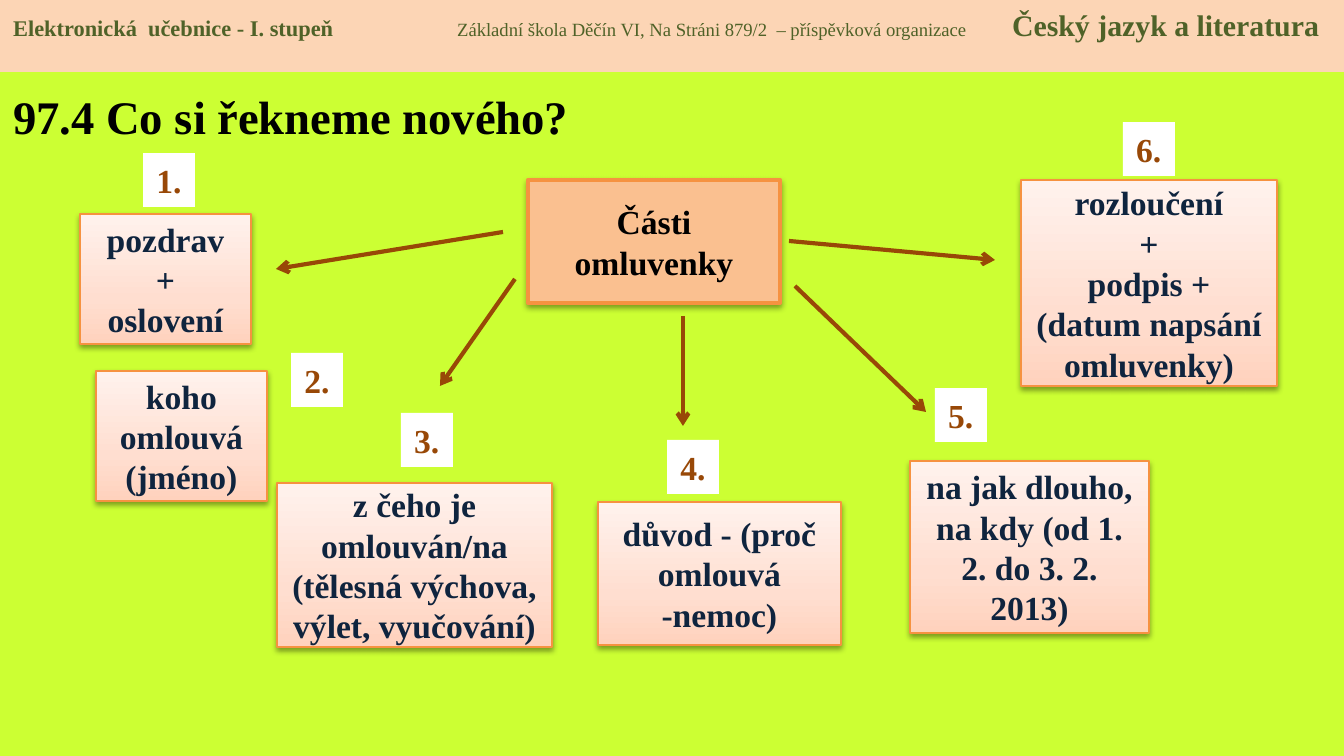
"""Builds a slide that maps the parts of a letter of excuse."""
import pptx
import pptx.dml.color
import pptx.enum.shapes
import pptx.enum.text
import pptx.oxml
import pptx.oxml.ns
import pptx.util

PX = 9144000 / 1344
THEME = {
    "font": "Times New Roman",
    "page": "CCFF33", "band": "FCD5B5", "header": "4F6228", "title": "000000",
    "hub": "FAC090", "edge": "F69240", "card_text": "0F243E",
    "accent": "984807", "badge": "FFFFFF", "shadow": "000000",
    "gradient": [(0, "FFD2BD"), (35, "FFDED0"), (100, "FFF2ED")],
    "title_size": 25, "body_size": 18, "thick": 2.25, "thin": 0.75,
}

TITLE = ("97.4 Co si řekneme nového?", (0, 72, 630, 88))
BAND = (0, 0, 1344, 72)
HEADER = [
    ("Elektronická  učebnice - I. stupeň", 12, True, 0),
    ("Základní škola Děčín VI, Na Stráni 879/2  – příspěvková organizace", 10, False, 444),
    ("Český jazyk a literatura", 16, True, 999),
]
HUB = ("Části omluvenky", (528, 180, 252, 123))
CARDS = [
    ("pozdrav\v+\noslovení", (80, 214, 171, 130)),
    ("koho omlouvá\n(jméno)", (96, 371, 171, 130)),
    ("z čeho je omlouván/na (tělesná výchova, výlet, vyučování)", (277, 483, 275, 164)),
    ("důvod - (proč omlouvá -nemoc)", (598, 502, 243, 143)),
    ("na jak dlouho, na kdy (od 1. 2. do 3. 2. 2013)", (910, 461, 239, 172)),
    ("rozloučení\n+\npodpis + (datum napsání omluvenky)", (1021, 180, 256, 206)),
]
BADGE_SIZE = (52, 54)
BADGES = [(143, 153), (291, 353), (401, 413), (667, 440), (935, 388), (1123, 122)]
ARROWS = [
    ((503, 232), (276, 269)),
    ((515, 279), (440, 386)),
    ((683, 316), (683, 426)),
    ((795, 286), (926, 412)),
    ((789, 241), (995, 260)),
]


def emu(lengths):
    return [pptx.util.Emu(round(n * PX)) for n in lengths]


def rgb(name):
    return pptx.dml.color.RGBColor.from_string(THEME[name])


def xml(body):
    tag, rest = body[1:].split(" ", 1)
    return pptx.oxml.parse_xml(f"<{tag} {pptx.oxml.ns.nsdecls('a')} {rest}")


def style_run(r, size, color, bold=True):
    r.font.name = THEME["font"]
    r.font.size = pptx.util.Pt(size)
    r.font.bold = bold
    r.font.color.rgb = rgb(color)


def write(sp, text, size, color, align="CENTER", anchor="MIDDLE", wrap=True):
    tf = sp.text_frame
    tf.word_wrap = wrap
    tf.vertical_anchor = pptx.enum.text.MSO_ANCHOR[anchor]
    tf.text = text
    for p in tf.paragraphs:
        p.alignment = pptx.enum.text.PP_ALIGN[align]
        for r in p.runs:
            style_run(r, size, color)


def add_box(slide, box, fill, width=None):
    sp = slide.shapes.add_shape(pptx.enum.shapes.MSO_SHAPE.RECTANGLE, *emu(box))
    sp.fill.solid()
    sp.fill.fore_color.rgb = rgb(fill)
    if width:
        sp.line.color.rgb = rgb("edge")
        sp.line.width = pptx.util.Pt(width)
    else:
        sp.line.fill.background()
    sp.shadow.inherit = False
    return sp


def add_shadow(sp):
    effects = sp._element.spPr.find(pptx.oxml.ns.qn("a:effectLst"))
    effects.append(xml(
        '<a:outerShdw blurRad="39370" dist="20320" dir="5400000" rotWithShape="0">'
        f'<a:srgbClr val="{THEME["shadow"]}"><a:alpha val="38000"/></a:srgbClr></a:outerShdw>'))


def add_gradient(sp):
    stops = "".join(f'<a:gs pos="{pos * 1000}"><a:srgbClr val="{color}"/></a:gs>'
                    for pos, color in THEME["gradient"])
    spPr = sp._element.spPr
    solid = spPr.find(pptx.oxml.ns.qn("a:solidFill"))
    spPr.replace(solid, xml(f'<a:gradFill rotWithShape="1"><a:gsLst>{stops}</a:gsLst>'
                            '<a:lin ang="16200000" scaled="0"/></a:gradFill>'))


def add_header(slide):
    sp = add_box(slide, BAND, "band")
    write(sp, "", 12, "header", "LEFT", "TOP")
    p = sp.text_frame.paragraphs[0]
    tabs = "".join(f'<a:tab pos="{emu([stop])[0]}" algn="l"/>' for *_, stop in HEADER if stop)
    p._p.get_or_add_pPr().append(xml(f"<a:tabLst >{tabs}</a:tabLst>"))
    for text, size, bold, stop in HEADER:
        r = p.add_run()
        r.text = "\t" + text if stop else text
        style_run(r, size, "header", bold)


def add_arrow(slide, start, end):
    line = slide.shapes.add_connector(
        pptx.enum.shapes.MSO_CONNECTOR.STRAIGHT, *emu(start + end))
    line.line.color.rgb = rgb("accent")
    line.line.width = pptx.util.Pt(THEME["thick"])
    spPr = line._element.spPr
    spPr.find(pptx.oxml.ns.qn("a:ln")).append(xml('<a:tailEnd type="arrow"/>'))
    spPr.append(xml("<a:effectLst />"))


def main():
    prs = pptx.Presentation()
    prs.slide_width, prs.slide_height = emu((1344, 756))
    slide = prs.slides.add_slide(prs.slide_layouts[6])
    slide.background.fill.solid()
    slide.background.fill.fore_color.rgb = rgb("page")

    text, box = TITLE
    write(slide.shapes.add_textbox(*emu(box)), text, THEME["title_size"], "title", "LEFT")
    add_header(slide)

    text, box = HUB
    hub = add_box(slide, box, "hub", THEME["thick"])
    add_shadow(hub)
    write(hub, text, THEME["body_size"], "title")

    for text, box in CARDS:
        card = add_box(slide, box, "band", THEME["thin"])
        add_gradient(card)
        add_shadow(card)
        write(card, text, THEME["body_size"], "card_text")

    for start, end in ARROWS:
        add_arrow(slide, start, end)

    for number, corner in enumerate(BADGES, 1):
        badge = add_box(slide, corner + BADGE_SIZE, "badge")
        write(badge, f"{number}.", THEME["body_size"], "accent", "LEFT", "TOP", wrap=False)

    prs.save("out.pptx")


if __name__ == "__main__":
    main()
